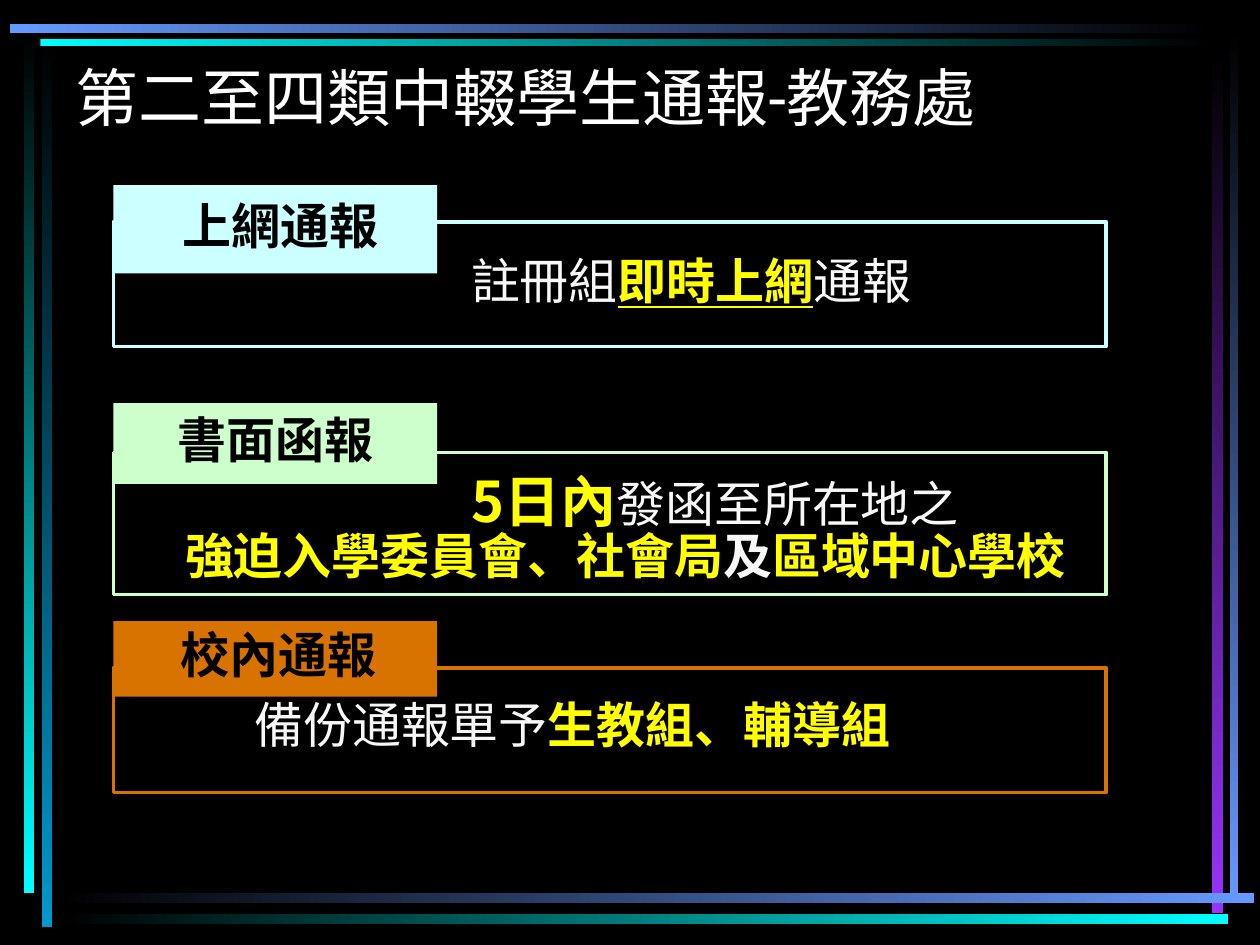
import pptx
import pptx.util
import pptx.dml.color
import pptx.enum.shapes
import pptx.enum.text
import pptx.oxml.ns
import lxml.etree

Inches = pptx.util.Inches
Pt = pptx.util.Pt
ALIGN = pptx.enum.text.PP_ALIGN
ANCHOR = pptx.enum.text.MSO_ANCHOR
RECT = pptx.enum.shapes.MSO_SHAPE.RECTANGLE

COLORS = {
    "black": "000000", "white": "FFFFFF", "soft": "F8F8F8", "yellow": "FFFF00",
    "ice": "CCFFFF", "mint": "CCFFCC", "orange": "D97300",
    "sea": "0099CC", "cyan": "00FFFF", "blue": "6699FF", "violet": "9933FF",
}
CJK = "Noto Sans CJK SC"
PLAIN = {"size": Pt(28), "name": CJK, "color": "soft", "bold": False}
STRONG = {**PLAIN, "color": "yellow", "bold": True}
LABEL = {**PLAIN, "color": "black", "bold": True}
TITLE = {"size": Pt(36), "name": "Roboto", "color": "white", "bold": False}

BARS = [
    ((0.33, 0.28, 0.08, 7.08), 270, "black", "sea"),
    ((0.19, 0.25, 0.08, 6.84), 270, "black", "cyan"),
    ((9.76, 0.24, 0.07, 6.93), 270, "black", "blue"),
    ((9.62, 0.42, 0.09, 6.83), 270, "black", "violet"),
    ((0.45, 7.09, 9.5, 0.08), 0, "black", "blue"),
    ((0.45, 7.25, 9.3, 0.08), 0, "black", "cyan"),
    ((0.32, 0.31, 9.32, 0.06), 0, "cyan", "black"),
    ((0.08, 0.19, 9.56, 0.07), 0, "blue", "black"),
]

NOTICES = [
    {"box": (0.9, 1.76, 7.88, 0.99), "color": "ice", "label": "上網通報",
     "rise": 0.29, "height": 0.7, "shift": 0.08,
     "lines": [((3.64, 1.94, 4.92, 0.57),
                [("註冊組", PLAIN), ("即時上網", {**STRONG, "underline": True}),
                 ("通報", PLAIN)])]},
    {"box": (0.9, 3.59, 7.88, 1.13), "color": "mint", "label": "書面函報",
     "rise": 0.39, "height": 0.64, "shift": 0,
     "lines": [((1.37, 4.12, 7.41, 0.57),
                [("強迫入學委員會、社會局", STRONG),
                 ("及", {**STRONG, "color": "soft"}), ("區域中心學校", STRONG)]),
               ((3.64, 3.65, 4.51, 0.64),
                [("5日內", {**STRONG, "size": Pt(32)}),
                 ("發函至所在地之", PLAIN)])]},
    {"box": (0.9, 5.3, 7.88, 0.99), "color": "orange", "label": "校內通報",
     "rise": 0.37, "height": 0.6, "shift": 0.05,
     "lines": [((1.92, 5.46, 6.56, 0.57),
                [("備份通報單予", PLAIN), ("生教組、輔導組", STRONG)])]},
]


def rgb(name):
    return pptx.dml.color.RGBColor.from_string(COLORS[name])


def inches(box):
    return [Inches(v) for v in box]


def add_runs(p, runs):
    for text, fmt in runs:
        r = p.add_run()
        r.text = text
        for key, value in fmt.items():
            if key == "color":
                r.font.color.rgb = rgb(value)
            else:
                setattr(r.font, key, value)
        ea = lxml.etree.Element(pptx.oxml.ns.qn("a:ea"), typeface=CJK)
        r.font._element.find(pptx.oxml.ns.qn("a:latin")).addnext(ea)


def add_rect(s, box):
    sp = s.shapes.add_shape(RECT, *inches(box))
    sp.shadow.inherit = False
    sp.line.fill.background()
    return sp


def add_bar(s, box, angle, start, end):
    sp = add_rect(s, box)
    sp.fill.gradient()
    sp.fill.gradient_angle = angle
    for stop, color, position in zip(sp.fill.gradient_stops, (start, end), (0, 1)):
        stop.color.rgb = rgb(color)
        stop.position = position


def add_title(s, box, text):
    sp = s.shapes.title
    sp.left, sp.top, sp.width, sp.height = inches(box)
    tf = sp.text_frame
    tf.vertical_anchor = ANCHOR.MIDDLE
    tf.paragraphs[0].alignment = ALIGN.LEFT
    add_runs(tf.paragraphs[0], [(text, TITLE)])


def add_line(s, box, runs):
    tf = s.shapes.add_textbox(*inches(box)).text_frame
    tf.word_wrap = True
    add_runs(tf.paragraphs[0], runs)


def add_label(s, box, text, color, shift):
    sp = add_rect(s, box)
    sp.fill.solid()
    sp.fill.fore_color.rgb = rgb(color)
    tf = sp.text_frame
    frame = {"word_wrap": True, "vertical_anchor": ANCHOR.MIDDLE,
             "margin_left": Inches(0.05 + shift), "margin_right": Inches(0.05),
             "margin_top": Inches(0.05), "margin_bottom": Inches(0.05)}
    for key, value in frame.items():
        setattr(tf, key, value)
    p = tf.paragraphs[0]
    p.alignment = ALIGN.CENTER
    p.line_spacing = 0.85
    add_runs(p, [(text, LABEL)])


def add_notice(s, box, color, label, rise, height, shift, lines):
    sp = add_rect(s, box)
    sp.fill.background()
    sp.line.color.rgb = rgb(color)
    sp.line.width = Pt(2)
    left, top = box[:2]
    add_label(s, (left, top - rise, 2.57, height), label, color, shift)
    for line_box, runs in lines:
        add_line(s, line_box, runs)


def main():
    prs = pptx.Presentation()
    prs.slide_width, prs.slide_height = Inches(10), Inches(7.5)
    s = prs.slides.add_slide(prs.slide_layouts[5])
    s.background.fill.solid()
    s.background.fill.fore_color.rgb = rgb("black")
    for bar in BARS:
        add_bar(s, *bar)
    add_title(s, (0.5, 0.3, 9.07, 0.93), "第二至四類中輟學生通報-教務處")
    for notice in NOTICES:
        add_notice(s, **notice)
    prs.save("out.pptx")


if __name__ == "__main__":
    main()
